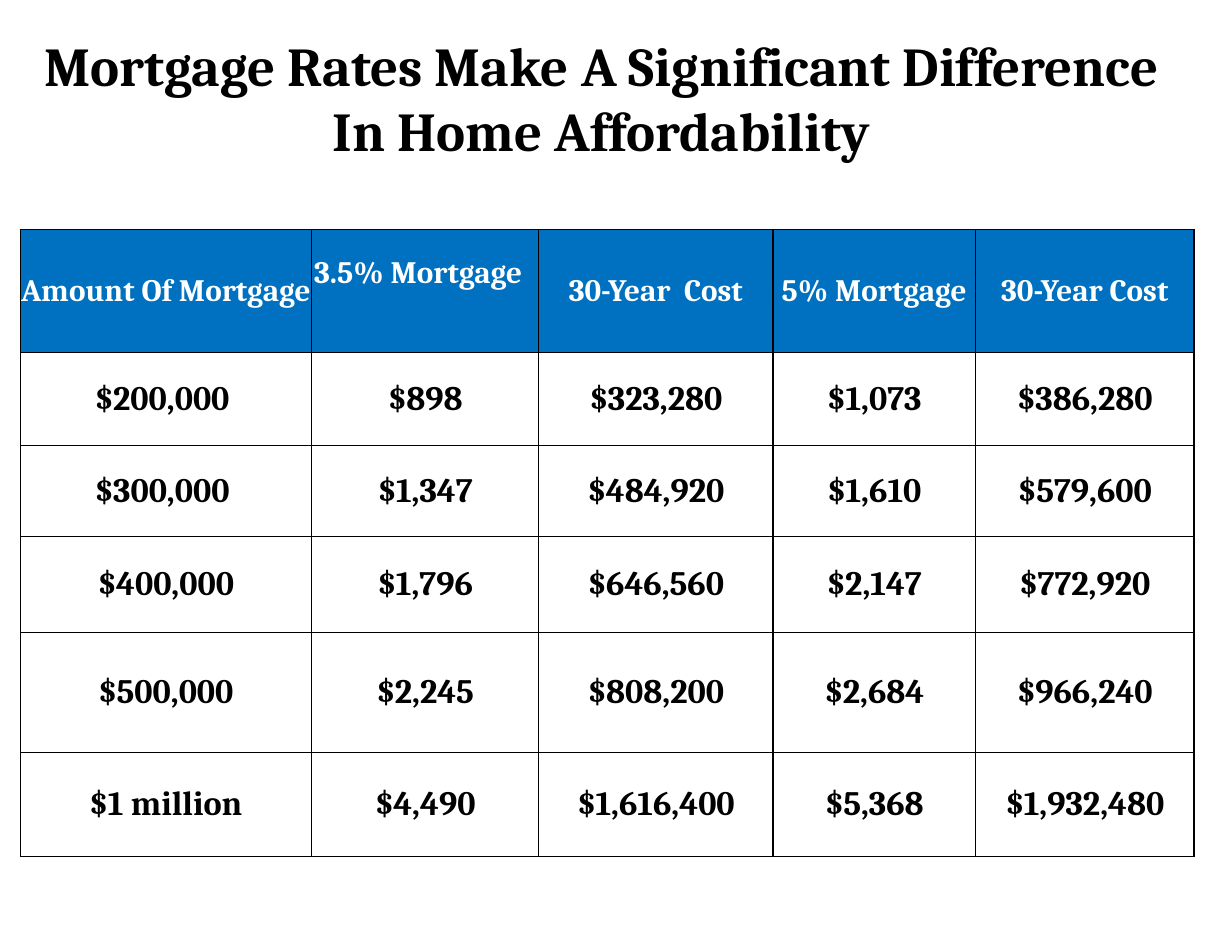
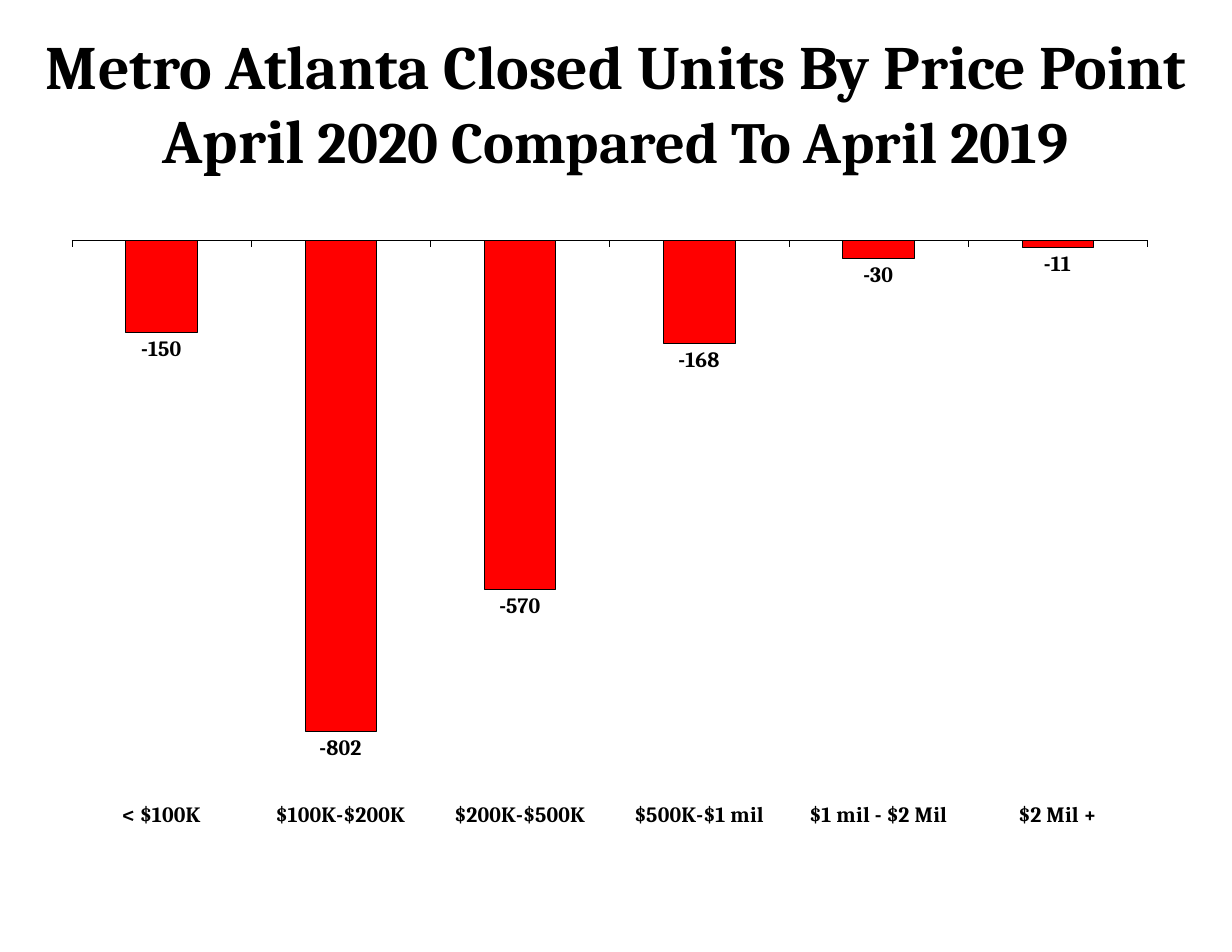
from lxml import etree
from pptx import Presentation
from pptx.chart.data import CategoryChartData
from pptx.dml.color import RGBColor
from pptx.enum.chart import XL_CHART_TYPE as ChartType
from pptx.enum.chart import XL_LABEL_POSITION as LabelPosition
from pptx.enum.chart import XL_TICK_LABEL_POSITION as TickLabels
from pptx.enum.chart import XL_TICK_MARK as TickMark
from pptx.enum.text import MSO_ANCHOR, MSO_AUTO_SIZE, PP_ALIGN
from pptx.oxml import parse_xml
from pptx.oxml.ns import nsdecls, qn
from pptx.util import Pt

BLACK = RGBColor(0x00, 0x00, 0x00)
WHITE = RGBColor(0xFF, 0xFF, 0xFF)
BLUE = RGBColor(0x00, 0x70, 0xC0)
RED = RGBColor(0xFF, 0x00, 0x00)
FONT = "Cambria"


def style_font(font, size, color=BLACK):
    font.name = FONT
    font.size = Pt(size)
    font.bold = True
    font.color.rgb = color


def add_titled_slide(box, anchor, lines):
    slide = deck.slides.add_slide(deck.slide_layouts[5])
    title = slide.shapes.title
    title.left, title.top, title.width, title.height = [Pt(v) for v in box]
    frame = title.text_frame
    frame.word_wrap = True
    frame.auto_size = MSO_AUTO_SIZE.NONE
    frame.vertical_anchor = anchor
    paragraph = frame.paragraphs[0]
    paragraph.alignment = PP_ALIGN.CENTER
    for number, line in enumerate(lines):
        if number:
            paragraph.add_line_break()
        for text, size in line:
            run = paragraph.add_run()
            run.text = text
            style_font(run.font, size)
    return slide


deck = Presentation()
deck.slide_width, deck.slide_height = Pt(792), Pt(612)

rates_slide = add_titled_slide(
    (20, 16.5, 733, 93), MSO_ANCHOR.TOP,
    [[("Mortgage Rates Make A Significant Difference In Home Affordability", 35.2)]])

mortgage_rows = [
    ["Amount Of Mortgage", "3.5% Mortgage", "30-Year  Cost", "5% Mortgage", "30-Year Cost"],
    ["$200,000 ", "$898", "$323,280", "$1,073", "$386,280"],
    ["$300,000 ", "$1,347", "$484,920", "$1,610", "$579,600"],
    ["$400,000", "$1,796", "$646,560", "$2,147", "$772,920"],
    ["$500,000", "$2,245", "$808,200", "$2,684", "$966,240"],
    ["$1 million", "$4,490", "$1,616,400", "$5,368", "$1,932,480"],
]
column_widths = [187.2, 146.2, 150.5, 130.3, 140.4]
row_heights = [79.2, 59.8, 58.3, 61.9, 77, 67]

mortgages = rates_slide.shapes.add_table(
    len(mortgage_rows), len(column_widths), Pt(13), Pt(147.6),
    Pt(sum(column_widths)), Pt(sum(row_heights))).table
for column, width in zip(mortgages.columns, column_widths):
    column.width = Pt(width)

for row_number, (amounts, height) in enumerate(zip(mortgage_rows, row_heights)):
    mortgages.rows[row_number].height = Pt(height)
    is_header = row_number == 0
    for column_number, amount in enumerate(amounts):
        cell = mortgages.cell(row_number, column_number)
        cell.margin_left = cell.margin_right = cell.margin_top = cell.margin_bottom = 0
        cell.vertical_anchor = MSO_ANCHOR.MIDDLE
        cell_properties = cell._tc.get_or_add_tcPr()
        for side in ("lnL", "lnR", "lnT", "lnB"):
            cell_properties.append(parse_xml(
                f'<a:{side} {nsdecls("a")} w="12700"><a:solidFill>'
                f'<a:srgbClr val="{BLACK}"/></a:solidFill></a:{side}>'))
        cell.fill.solid()
        cell.fill.fore_color.rgb = BLUE if is_header else WHITE
        paragraph = cell.text_frame.paragraphs[0]
        paragraph.alignment = PP_ALIGN.CENTER
        run = paragraph.add_run()
        run.text = amount
        style_font(run.font, 20 if is_header else 22, WHITE if is_header else BLACK)

low_rate_header = mortgages.cell(0, 1)
low_rate_header.margin_right = Pt(9)
low_rate_header.margin_bottom = Pt(23)

units_slide = add_titled_slide(
    (0, 10.5, 792, 110), MSO_ANCHOR.MIDDLE,
    [[("Metro Atlanta Closed Units By Price Point", 39.6)],
     [("April ", 39.6), ("2020 Compared To April 2019", 37.4)]])

closed_units = CategoryChartData(number_format="0")
closed_units.categories = ["< $100K", "$100K-$200K", "$200K-$500K",
                           "$500K-$1 mil", "$1 mil - $2 Mil", "$2 Mil +"]
closed_units.add_series("Series 1", [-150, -802, -570, -168, -30, -11])
chart = units_slide.shapes.add_chart(
    ChartType.COLUMN_CLUSTERED, Pt(46), Pt(49), Pt(746), Pt(497), closed_units).chart
chart.has_title = False
chart.has_legend = False
style_font(chart.font, 14)

price_axis = chart.category_axis
price_axis.tick_label_position = TickLabels.LOW
price_axis.major_tick_mark = TickMark.OUTSIDE
price_axis.format.line.color.rgb = BLACK
price_axis.format.line.width = Pt(0.25)

unit_axis = chart.value_axis
unit_axis.minimum_scale, unit_axis.maximum_scale = -900, 0
unit_axis.has_major_gridlines = False
unit_axis.visible = False

bars = chart.plots[0]
bars.gap_width = 150
bars.vary_by_categories = False
unit_change = bars.series[0]
unit_change.invert_if_negative = False
unit_change.format.fill.solid()
unit_change.format.fill.fore_color.rgb = RED
unit_change.format.line.color.rgb = BLACK
unit_change.format.line.width = Pt(0.25)

bars.has_data_labels = True
labels = bars.data_labels
labels.show_value = True
labels.number_format = "0"
labels.number_format_is_linked = False
labels.position = LabelPosition.OUTSIDE_END
style_font(labels.font, 14)

plot_area = chart._chartSpace.chart.plotArea
for old_layout in plot_area.findall(qn("c:layout")):
    plot_area.remove(old_layout)
layout = parse_xml(f'<c:layout {nsdecls("c")}><c:manualLayout/></c:layout>')
plot_area.insert(0, layout)
for tag, value in [("layoutTarget", "inner"), ("xMode", "edge"), ("yMode", "edge"),
                   ("x", "0"), ("y", "0.212"), ("w", "0.927"), ("h", "0.713")]:
    etree.SubElement(layout[0], qn(f"c:{tag}")).set("val", value)

deck.save("out.pptx")
